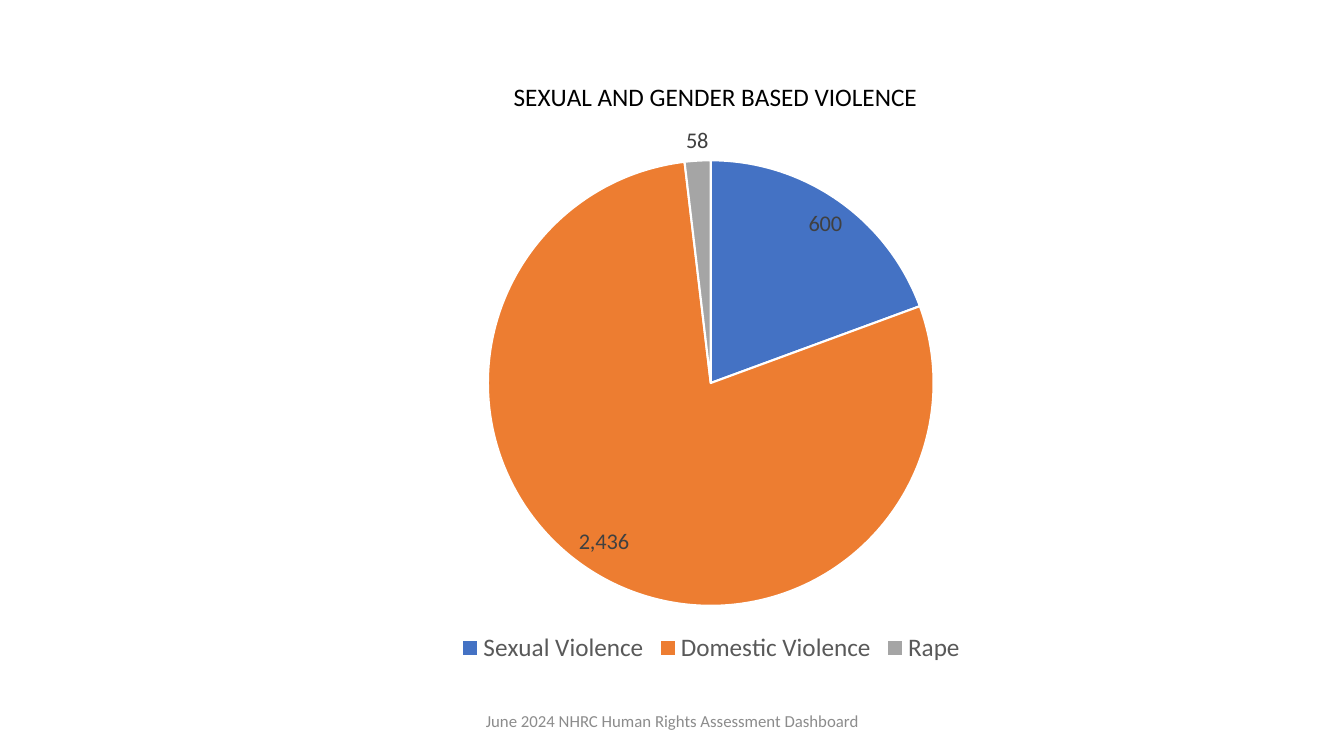
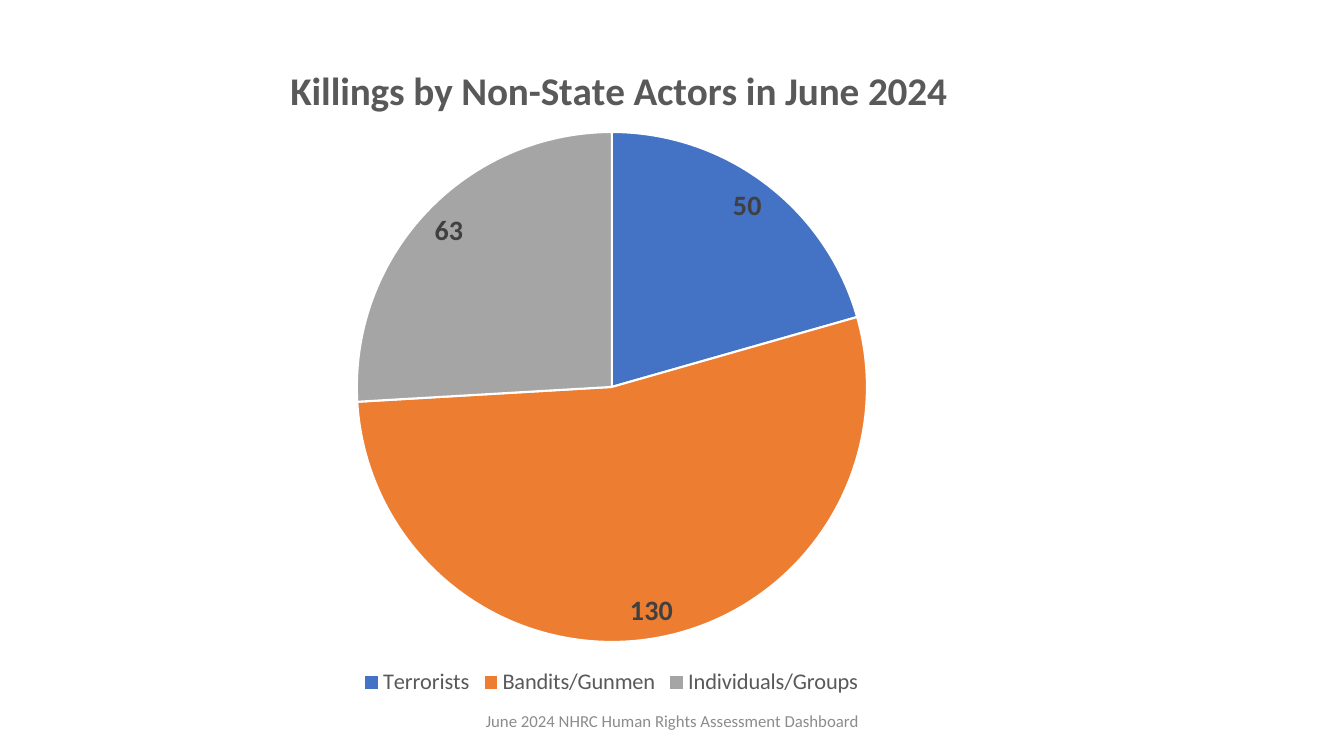
import pptx
import pptx.chart.data
import pptx.dml.color
import pptx.enum.chart
import pptx.enum.text
import pptx.oxml
import pptx.oxml.ns
import pptx.util
from pptx.util import Inches

FONT = "Calibri"
FOOTER = "June 2024 NHRC Human Rights Assessment Dashboard"
SLICE_COLORS = ["4472C4", "ED7D31", "A5A5A5"]
WHITE, FOOTER_GRAY, LEGEND_GRAY, LABEL_GRAY = "FFFFFF", "8C8C8C", "595959", "404040"

# Content: boxes are left, top, width, height; points are slide inches
PIES = [
    {
        "title": "SEXUAL AND GENDER BASED VIOLENCE",
        "title_style": (18, "000000", False),
        "title_corner": (5.05, 0.74),
        "box": (2.05, 0.49, 10.01, 6.14),
        "center": (7.05, 3.8),
        "diameter": 4.42,
        "values": {"Sexual Violence": 600, "Domestic Violence": 2436, "Rape": 58},
        "label_style": (16, LABEL_GRAY, False),
        "legend_size": 18,
    },
    {
        "title": "Killings by Non-State Actors in June 2024",
        "title_style": (28, LEGEND_GRAY, True),
        "title_corner": (2.81, 0.57),
        "box": (0.1, 0.28, 11.93, 6.67),
        "center": (6.07, 3.84),
        "diameter": 5.06,
        "values": {"Terrorists": 50, "Bandits/Gunmen": 130, "Individuals/Groups": 63},
        "label_style": (20, LABEL_GRAY, True),
        "legend_size": 16,
    },
]


def color(value):
    return pptx.dml.color.RGBColor.from_string(value)


def style_font(font, size, value, bold=False):
    font.name = FONT
    font.size = pptx.util.Pt(size)
    font.bold = bold
    font.color.rgb = color(value)


def set_layout(element, index, box, corner, size=None):
    """Place a chart part at a slide position, as fractions of the chart."""
    left, top, width, height = box
    fractions = {"x": (corner[0] - left) / width, "y": (corner[1] - top) / height}
    if size:
        fractions.update(w=size / width, h=size / height)
    target = '<c:layoutTarget val="inner"/>' if size else ""
    modes = "".join(f'<c:{name}Mode val="edge"/>' for name in "xy")
    values = "".join(f'<c:{name} val="{value:.4f}"/>' for name, value in fractions.items())
    for old in element.findall(pptx.oxml.ns.qn("c:layout")):
        element.remove(old)
    element.insert(index, pptx.oxml.parse_xml(
        f'<c:layout {pptx.oxml.ns.nsdecls("c")}><c:manualLayout>'
        f"{target}{modes}{values}</c:manualLayout></c:layout>"))


def add_footer(slide):
    box = slide.shapes.add_textbox(Inches(4.42), Inches(6.95), Inches(4.5), Inches(0.4))
    frame = box.text_frame
    frame.word_wrap = True
    frame.vertical_anchor = pptx.enum.text.MSO_ANCHOR.MIDDLE
    paragraph = frame.paragraphs[0]
    paragraph.alignment = pptx.enum.text.PP_ALIGN.CENTER
    run = paragraph.add_run()
    run.text = FOOTER
    style_font(run.font, 12, FOOTER_GRAY)


def add_pie(slide, pie):
    data = pptx.chart.data.CategoryChartData(number_format="#,##0")
    data.categories = list(pie["values"])
    data.add_series("Series 1", list(pie["values"].values()))
    chart = slide.shapes.add_chart(
        pptx.enum.chart.XL_CHART_TYPE.PIE, *map(Inches, pie["box"]), data).chart
    style_font(chart.font, 10, "000000")

    # Title
    chart.has_title = True
    title = chart.chart_title
    title.include_in_layout = False
    run = title.text_frame.paragraphs[0].add_run()
    run.text = pie["title"]
    style_font(run.font, *pie["title_style"])
    set_layout(title.element, 1, pie["box"], pie["title_corner"])

    # Slices
    plot = chart.plots[0]
    plot.vary_by_categories = True
    for index, value in enumerate(SLICE_COLORS):
        slice_format = plot.series[0].points[index].format
        slice_format.fill.solid()
        slice_format.fill.fore_color.rgb = color(value)
        slice_format.line.color.rgb = color(WHITE)
        slice_format.line.width = pptx.util.Pt(1.5)
    corner = [middle - pie["diameter"] / 2 for middle in pie["center"]]
    plot_area = chart.element.find(".//" + pptx.oxml.ns.qn("c:plotArea"))
    set_layout(plot_area, 0, pie["box"], corner, pie["diameter"])

    # Value labels
    plot.has_data_labels = True
    labels = plot.data_labels
    labels.show_value = True
    labels.show_percentage = False
    labels.number_format = "#,##0"
    labels.number_format_is_linked = False
    labels.position = pptx.enum.chart.XL_LABEL_POSITION.BEST_FIT
    style_font(labels.font, *pie["label_style"])

    # Legend
    chart.has_legend = True
    chart.legend.position = pptx.enum.chart.XL_LEGEND_POSITION.BOTTOM
    chart.legend.include_in_layout = False
    style_font(chart.legend.font, pie["legend_size"], LEGEND_GRAY)


def main():
    presentation = pptx.Presentation()
    presentation.slide_width = Inches(13.33)
    presentation.slide_height = Inches(7.5)
    blank_layout = presentation.slide_layouts[6]
    for pie in PIES:
        slide = presentation.slides.add_slide(blank_layout)
        add_footer(slide)
        add_pie(slide, pie)
    presentation.save("out.pptx")


if __name__ == "__main__":
    main()
